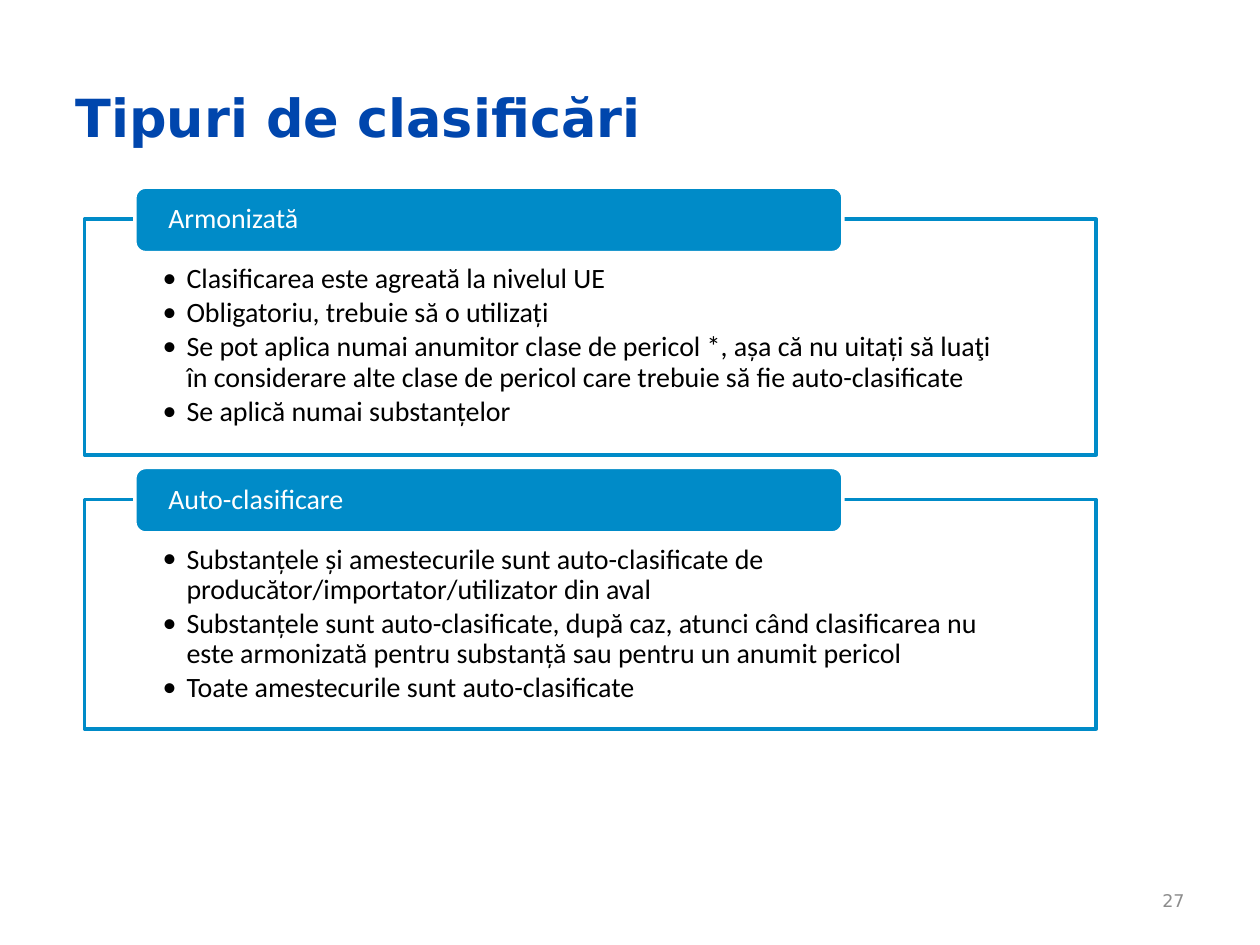
from dataclasses import dataclass

from lxml import etree
from pptx import Presentation
from pptx import util as u
from pptx.dml.color import RGBColor
from pptx.enum import shapes, text
from pptx.oxml.ns import qn

HUES = {"title": "0046AD", "blue": "008BC8", "white": "FFFFFF",
        "black": "000000", "grey": "8C8C8C"}
COLS, ROWS = 100, 75  # grid of the slide
LEFT, WIDE = 6.7, 80.3  # panel columns
TAB_LEFT, TAB_WIDE, TAB_HIGH = 10.7, 56.2, 5.2
TAB_RISE = 2.55  # tab top above panel top


@dataclass
class Group:
    head: str
    top: float
    high: float
    items: list[str]


GROUPS = [
    Group("Armonizată", 17.4, 18.7, [
        "Clasificarea este agreată la nivelul UE",
        "Obligatoriu, trebuie să o utilizați",
        "Se pot aplica numai anumitor clase de pericol *, așa că nu uitați să "
        "luaţi în considerare alte clase de pericol care trebuie să fie "
        "auto-clasificate",
        "Se aplică numai substanțelor"]),
    Group("Auto-clasificare", 39.65, 18.2, [
        "Substanțele și amestecurile sunt auto-clasificate de "
        "producător/importator/utilizator din aval",
        "Substanțele sunt auto-clasificate, după caz, atunci când clasificarea "
        "nu este armonizată pentru substanță sau pentru un anumit pericol",
        "Toate amestecurile sunt auto-clasificate"]),
]


def hue(name: str) -> RGBColor:
    return RGBColor.from_string(HUES[name])


def cell(deck, col: float, row: float, wide: float, high: float) -> list[int]:
    """Turn grid columns and rows into left, top, width, height."""
    x, y = deck.slide_width / COLS, deck.slide_height / ROWS
    return [round(n) for n in (col * x, row * y, wide * x, high * y)]


def place(shape, box: list[int]) -> None:
    shape.left, shape.top, shape.width, shape.height = box


def style(para, face: str, size: float, color: str, bold: bool = False) -> None:
    font = para.font
    font.name, font.size, font.bold = face, u.Pt(size), bold
    font.color.rgb = hue(color)


def paint(shape, fill: str, line: str) -> None:
    shape.fill.solid()
    shape.fill.fore_color.rgb = hue(fill)
    shape.line.color.rgb = hue(line)
    shape.line.width = u.Pt(2)


def frame(shape, anchor, sides: float, top: float = 0, bottom: float = 0):
    body = shape.text_frame
    body.word_wrap, body.auto_size = True, text.MSO_AUTO_SIZE.NONE
    body.vertical_anchor = anchor
    body.margin_left = body.margin_right = u.Inches(sides)
    body.margin_top, body.margin_bottom = u.Inches(top), u.Inches(bottom)
    return body


def bullet(para) -> None:
    props = para._p.get_or_add_pPr()
    props.set("marL", str(u.Inches(0.19)))
    props.set("indent", str(-u.Inches(0.19)))
    etree.SubElement(props, qn("a:buFont")).set("typeface", "Calibri")
    etree.SubElement(props, qn("a:buChar")).set("char", "•")


def panel(deck, shape, group: Group) -> None:
    place(shape, cell(deck, LEFT, group.top, WIDE, group.high))
    paint(shape, "white", "blue")
    tint = shape.fill._xPr.find(qn("a:solidFill"))[0]
    etree.SubElement(tint, qn("a:alpha")).set("val", "90000")
    body = frame(shape, text.MSO_ANCHOR.TOP, 0.62, 0.36, 0.12)
    body.text = "\n".join(group.items)
    for para in body.paragraphs:
        para.level, para.line_spacing = 1, 0.9
        para.space_before, para.space_after = u.Pt(0), u.Pt(2.2)
        bullet(para)
        style(para, "Calibri", 16, "black")


def tab(deck, slide, group: Group) -> None:
    box = cell(deck, TAB_LEFT, group.top - TAB_RISE, TAB_WIDE, TAB_HIGH)
    shape = slide.shapes.add_shape(shapes.MSO_SHAPE.ROUNDED_RECTANGLE, *box)
    shape.shadow.inherit = False
    paint(shape, "blue", "white")
    body = frame(shape, text.MSO_ANCHOR.MIDDLE, 0.24)
    body.text = group.head
    para = body.paragraphs[0]
    para.alignment, para.line_spacing = text.PP_ALIGN.LEFT, 0.9
    style(para, "Calibri", 16, "white")


def main() -> None:
    deck = Presentation()
    deck.slide_width, deck.slide_height = u.Inches(10), u.Inches(7.5)
    slide = deck.slides.add_slide(deck.slide_layouts[3])
    title, *lists = slide.placeholders

    place(title, cell(deck, 5, 3, 90, 12.5))
    body = frame(title, text.MSO_ANCHOR.MIDDLE, 0.1, 0.05, 0.05)
    body.text = "Tipuri de clasificări"
    para = body.paragraphs[0]
    para.alignment = text.PP_ALIGN.LEFT
    style(para, "DejaVu Sans", 30, "title", bold=True)

    for shape, group in zip(lists, GROUPS):
        panel(deck, shape, group)
        tab(deck, slide, group)

    number = slide.shapes.add_textbox(*cell(deck, 71.7, 69.5, 23.3, 4))
    body = frame(number, text.MSO_ANCHOR.MIDDLE, 0.1, 0.05, 0.05)
    body.text = "27"
    para = body.paragraphs[0]
    para.alignment = text.PP_ALIGN.RIGHT
    style(para, "DejaVu Sans", 10, "grey")

    deck.save("out.pptx")


if __name__ == "__main__":
    main()
